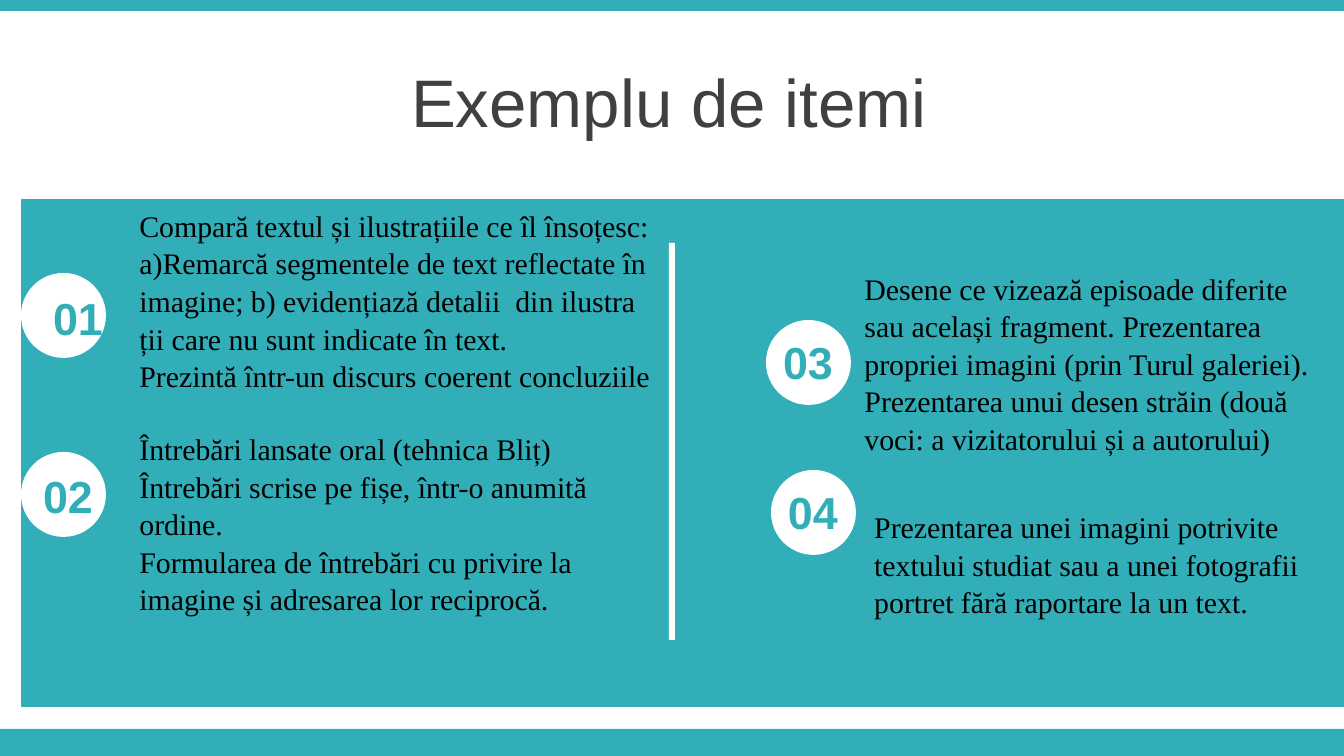
import pptx
import pptx.util
import pptx.dml.color
import pptx.enum.shapes
import pptx.enum.text
import lxml.etree

PX = 914400 / 134.4
TEAL = pptx.dml.color.RGBColor(0x32, 0xAE, 0xB8)
WHITE = pptx.dml.color.RGBColor(0xFF, 0xFF, 0xFF)
GREY = pptx.dml.color.RGBColor(0x40, 0x40, 0x40)
BLACK = pptx.dml.color.RGBColor(0, 0, 0)
RECT = pptx.enum.shapes.MSO_SHAPE.RECTANGLE
OVAL = pptx.enum.shapes.MSO_SHAPE.OVAL
CENTER = pptx.enum.text.PP_ALIGN.CENTER
LEFT = pptx.enum.text.PP_ALIGN.LEFT
TOP = pptx.enum.text.MSO_ANCHOR.TOP
MIDDLE = pptx.enum.text.MSO_ANCHOR.MIDDLE
A = "http://schemas.openxmlformats.org/drawingml/2006/main"

COMPARE = [
    "Compară textul și ilustrațiile ce îl însoțesc:",
    "a)Remarcă segmentele de text reflectate în imagine; "
    "b) evidențiază detalii  din ilustra ții care nu sunt indicate în text.",
    "Prezintă într-un discurs coerent concluziile",
]
QUESTIONS = [
    "Întrebări lansate oral (tehnica Bliț)",
    "Întrebări scrise pe fișe, într-o anumită ordine.",
    "Formularea de întrebări cu privire la imagine și adresarea lor reciprocă.",
]
DRAWINGS = [
    "Desene ce vizează episoade diferite sau același fragment. "
    "Prezentarea propriei imagini (prin Turul galeriei).",
    "Prezentarea unui desen străin (două voci: a vizitatorului și a autorului)",
]
PORTRAIT = [
    "Prezentarea unei imagini potrivite textului studiat sau a unei "
    "fotografii portret fără raportare la un text.",
]


def emu(*lengths):
    """Turn px lengths into EMU."""
    return [pptx.util.Emu(round(v * PX)) for v in lengths]


def place(sp, box):
    """Move a shape to a px box."""
    sp.left, sp.top, sp.width, sp.height = emu(*box)


def add_block(s, kind, box, color):
    """Add a flat filled shape without outline."""
    sp = s.shapes.add_shape(kind, *emu(*box))
    sp.shadow.inherit = False
    sp.fill.solid()
    sp.fill.fore_color.rgb = color
    sp.line.fill.background()


def set_frame(sp, anchor):
    """Wrap the text at a fixed size and return its frame."""
    tf = sp.text_frame
    tf.word_wrap = True
    tf.auto_size = pptx.enum.text.MSO_AUTO_SIZE.NONE
    tf.vertical_anchor = anchor
    return tf


def add_run(p, text, font, size, color, bold=False):
    """Add one formatted run to a paragraph."""
    r = p.add_run()
    r.text = text
    r.font.name = font
    r.font.size = pptx.util.Pt(size)
    r.font.color.rgb = color
    r.font.bold = bold


def add_title(sp, box, text):
    """Fill the title placeholder."""
    place(sp, box)
    p = set_frame(sp, MIDDLE).paragraphs[0]
    p.alignment = CENTER
    p.space_before = pptx.util.Pt(7)
    add_run(p, text, "Arial", 36, GREY)


def add_items(sp, box, groups):
    """Write groups of plain paragraphs with a one-line gap between groups."""
    place(sp, box)
    tf = set_frame(sp, TOP)
    for g, group in enumerate(groups):
        for i, text in enumerate(group):
            p = tf.paragraphs[0] if g == i == 0 else tf.add_paragraph()
            p.alignment = LEFT
            p.line_spacing = 1.05
            p.space_before = pptx.util.Pt(19 if g and i == 0 else 0)
            pPr = p._p.get_or_add_pPr()
            pPr.set("marL", "0")
            pPr.set("indent", "0")
            lxml.etree.SubElement(pPr, f"{{{A}}}buNone")
            add_run(p, text, "Times New Roman", 16, BLACK)
    return tf


def add_badge(s, x, y, dx, dy, number):
    """Add a white disc and its number, shifted by dx and dy."""
    add_block(s, OVAL, (x, y, 85, 85), WHITE)
    sp = s.shapes.add_textbox(*emu(x + dx, y + dy, 94, 67))
    p = set_frame(sp, TOP).paragraphs[0]
    p.alignment = CENTER
    add_run(p, f"{number:02d}", "Arial", 24, TEAL, True)


def add_panel(s, x, y, w, h):
    """Add the teal panel with its divider and numbered items."""
    add_block(s, RECT, (x, y, w, h), TEAL)
    add_block(s, RECT, (x + 648, y + 44, 6, 397), WHITE)
    left, right = s.placeholders[1], s.placeholders[2]
    for sp in (left, right):
        s.shapes._spTree.append(sp._element)
    add_items(left, (x + 105, y, 543, 411), [COMPARE, QUESTIONS])
    add_items(right, (x + 830, y + 63, 482, 195), [DRAWINGS])
    tf = add_items(s.shapes.add_textbox(0, 0, 0, 0),
                   (x + 840, y + 274, 462, 176), [PORTRAIT])
    tf.margin_top = emu(34)[0]
    badges = [(0, 74, 10, 11), (0, 253, 0, 10), (745, 121, -5, 8), (750, 271, -5, 8)]
    for number, (bx, by, dx, dy) in enumerate(badges, 1):
        add_badge(s, x + bx, y + by, dx, dy, number)


def main():
    """Build and save the slide."""
    prs = pptx.Presentation()
    prs.slide_width, prs.slide_height = emu(1344, 756)
    s = prs.slides.add_slide(prs.slide_layouts[3])
    add_block(s, RECT, (0, 729, 1344, 27), TEAL)
    add_block(s, RECT, (0, 0, 1344, 11), TEAL)
    add_title(s.shapes.title, (-3, 44, 1344, 113), "Exemplu de itemi")
    add_panel(s, 21, 199, 1323, 508)
    prs.save("out.pptx")


if __name__ == "__main__":
    main()
